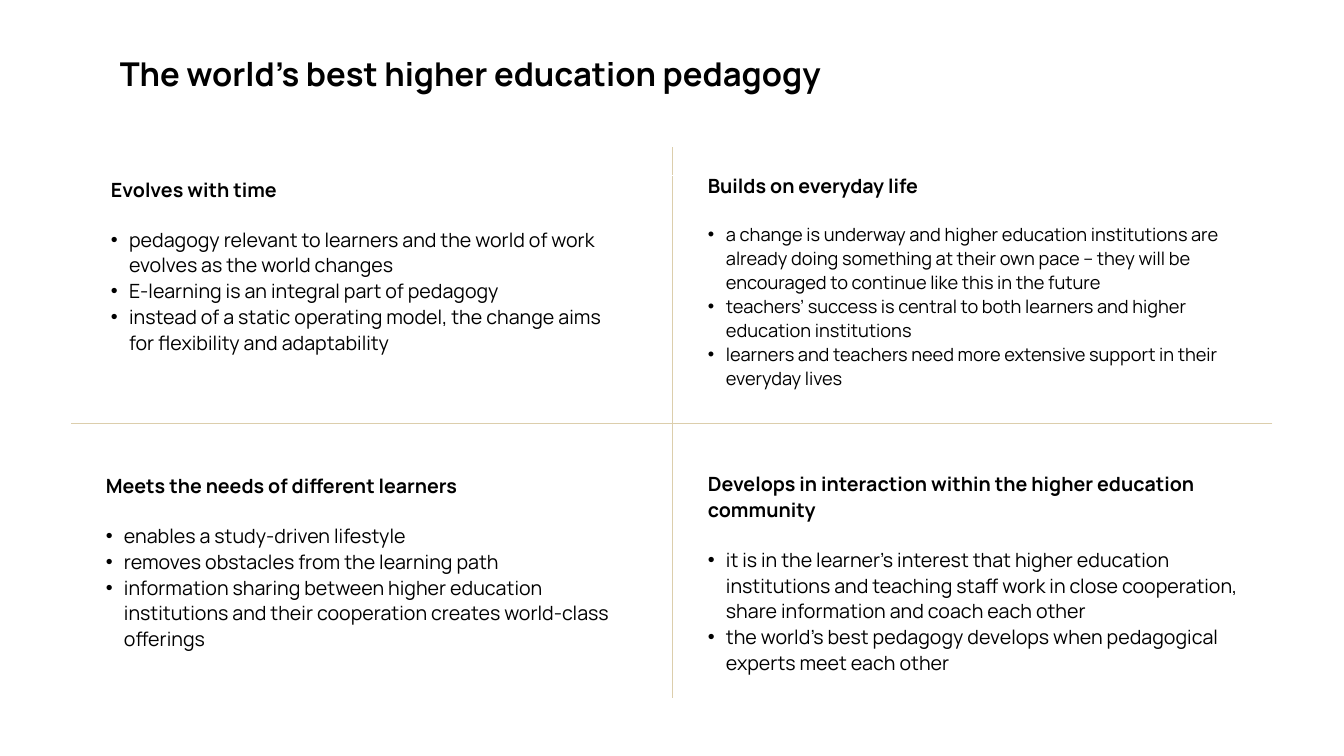
import pptx
import pptx.dml.color
import pptx.enum.shapes
import pptx.enum.text
import pptx.oxml
import pptx.oxml.ns
import pptx.util
from pptx.util import Inches

BLACK = pptx.dml.color.RGBColor(0x00, 0x00, 0x00)
WHITE = pptx.dml.color.RGBColor(0xFF, 0xFF, 0xFF)
SAND = pptx.dml.color.RGBColor(0xDC, 0xCE, 0xAC)
FONT = "Manrope"
INDENT = Inches(0.18)

# Left, top, width, height, heading, bullet size, bullets
QUADRANTS = [
    (1.1, 1.74, 5.01, 1.62, "Evolves with time", 14, [
        "pedagogy relevant to learners and the world of work evolves as the world changes",
        "E-learning is an integral part of pedagogy",
        "instead of a static operating model, the change aims for flexibility and adaptability",
    ]),
    (7.02, 1.7, 5.45, 1.71, "Builds on everyday life", 13, [
        "a change is underway and higher education institutions are already doing something "
        "at their own pace – they will be encouraged to continue like this in the future",
        "teachers’ success is central to both learners and higher education institutions",
        "learners and teachers need more extensive support in their everyday lives",
    ]),
    (1.05, 4.68, 5.17, 1.54, "Meets the needs of different learners", 14, [
        "enables a study-driven lifestyle",
        "removes obstacles from the learning path",
        "information sharing between higher education institutions and their cooperation "
        "creates world-class offerings",
    ]),
    (7.02, 4.66, 5.45, 1.71,
     "Develops in interaction within the higher education community", 14, [
         "it is in the learner’s interest that higher education institutions and teaching "
         "staff work in close cooperation, share information and coach each other",
         "the world's best pedagogy develops when pedagogical experts meet each other",
     ]),
]


def style_paragraph(paragraph, size, bold, line_spacing):
    paragraph.alignment = pptx.enum.text.PP_ALIGN.LEFT
    paragraph.line_spacing = line_spacing
    paragraph.font.name = FONT
    paragraph.font.size = pptx.util.Pt(size)
    paragraph.font.bold = bold
    paragraph.font.color.rgb = BLACK


def add_bullet(paragraph):
    properties = paragraph._p.get_or_add_pPr()
    properties.set("marL", str(INDENT))
    properties.set("indent", str(-INDENT))
    bullet_font = pptx.oxml.ns.qn("a:buFont")
    properties.append(properties.makeelement(bullet_font, {"typeface": "Arial"}))
    bullet = pptx.oxml.ns.qn("a:buChar")
    properties.append(properties.makeelement(bullet, {"char": "•"}))


def add_divider(slide, x1, y1, x2, y2):
    connector = slide.shapes.add_connector(
        pptx.enum.shapes.MSO_CONNECTOR.STRAIGHT,
        Inches(x1), Inches(y1), Inches(x2), Inches(y2))
    connector.line.color.rgb = SAND
    connector.line.width = pptx.util.Pt(1)
    properties = connector._element.spPr
    properties.append(properties.makeelement(pptx.oxml.ns.qn("a:effectLst"), {}))


def add_quadrant(slide, left, top, width, height, heading, bullet_size, bullets):
    box = slide.shapes.add_textbox(
        Inches(left), Inches(top), Inches(width), Inches(height))
    frame = box.text_frame
    frame.word_wrap = True
    frame.margin_left = frame.margin_right = 0
    frame.margin_top = frame.margin_bottom = 0

    paragraph = frame.paragraphs[0]
    paragraph.text = heading
    style_paragraph(paragraph, 14, True, 1.1)
    paragraph.space_after = pptx.util.Pt(17)

    for text in bullets:
        paragraph = frame.add_paragraph()
        paragraph.text = text
        add_bullet(paragraph)
        style_paragraph(paragraph, bullet_size, False, 1.1)


def add_title(slide, text):
    shape = slide.shapes.add_shape(
        pptx.enum.shapes.MSO_SHAPE.RECTANGLE,
        Inches(1.09), Inches(0.53), Inches(11.88), Inches(1.21))
    shape.shadow.inherit = False
    shape.fill.background()
    shape.line.color.rgb = WHITE
    shape.line.width = pptx.util.Pt(0.75)
    frame = shape.text_frame
    frame.word_wrap = True
    frame.vertical_anchor = pptx.enum.text.MSO_ANCHOR.TOP
    frame.paragraphs[0].text = text
    style_paragraph(frame.paragraphs[0], 23.4, True, 0.9)


def main():
    presentation = pptx.Presentation()
    presentation.slide_width = Inches(13.33)
    presentation.slide_height = Inches(7.5)
    slide = presentation.slides.add_slide(presentation.slide_layouts[6])

    # Cross that separates the four themes
    add_divider(slide, 6.67, 1.46, 6.67, 6.92)
    add_divider(slide, 12.62, 4.2, 0.7, 4.2)

    # Themes
    for quadrant in QUADRANTS:
        add_quadrant(slide, *quadrant)

    # Title
    add_title(slide, "The world's best higher education pedagogy")

    presentation.save("out.pptx")


if __name__ == "__main__":
    main()
